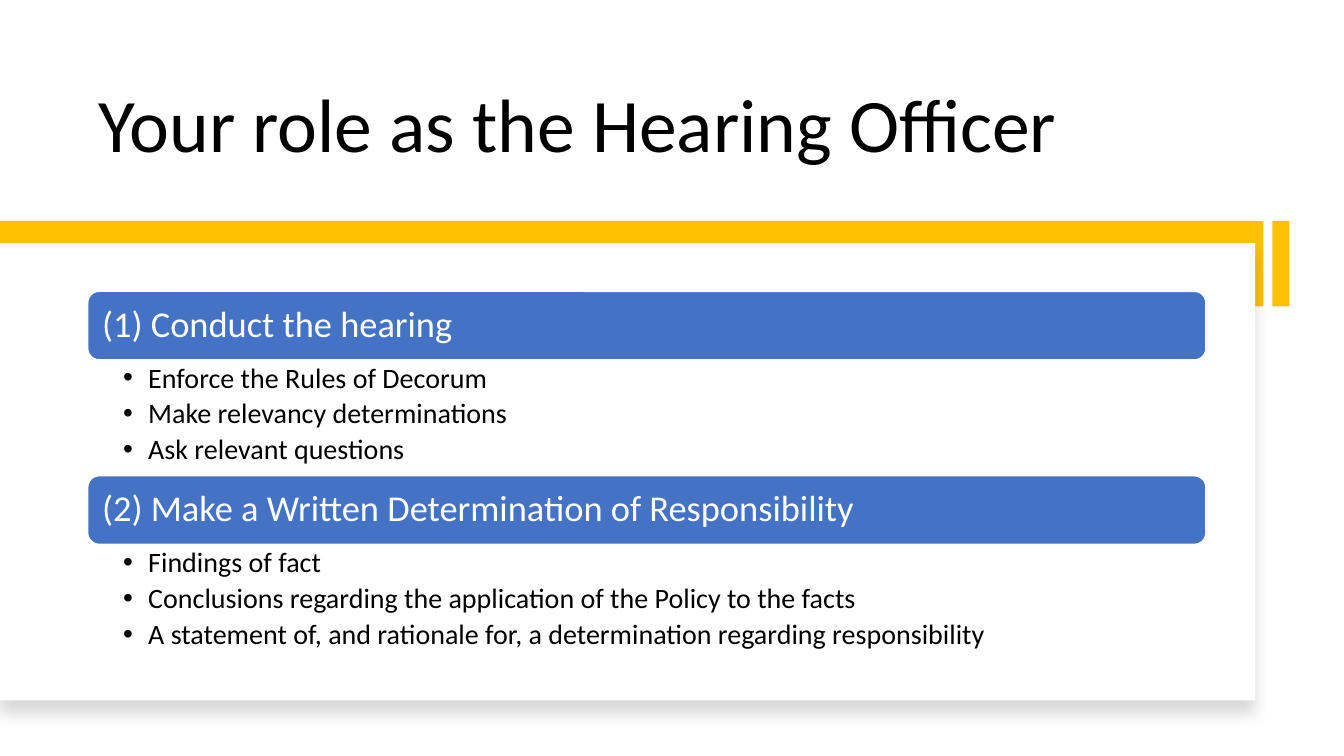
from lxml.etree import SubElement
from pptx import Presentation
from pptx.dml.color import RGBColor
from pptx.enum.shapes import MSO_SHAPE
from pptx.enum.text import MSO_ANCHOR, PP_ALIGN
from pptx.oxml import parse_xml
from pptx.oxml.ns import nsdecls, qn
from pptx.util import Inches, Pt

BLACK = RGBColor(0x00, 0x00, 0x00)
WHITE = RGBColor(0xFF, 0xFF, 0xFF)
GOLD = RGBColor(0xFF, 0xC0, 0x00)
BLUE = RGBColor(0x44, 0x72, 0xC4)
FONT = "Calibri"

DUTIES = [
    ("(1) Conduct the hearing", [
        "Enforce the Rules of Decorum",
        "Make relevancy determinations",
        "Ask relevant questions",
    ]),
    ("(2) Make a Written Determination of Responsibility", [
        "Findings of fact",
        "Conclusions regarding the application of the Policy to the facts",
        "A statement of, and rationale for, a determination regarding responsibility",
    ]),
]
DUTY_LEFT, DUTY_TOP, DUTY_WIDTH = 0.87, 2.89, 11.09
HEADING_HEIGHT, LIST_HEIGHT = 0.68, 1.15


def add_block(slide, box, fill, preset=MSO_SHAPE.RECTANGLE):
    block = slide.shapes.add_shape(preset, *map(Inches, box))
    block.shadow.inherit = False
    block.fill.solid()
    block.fill.fore_color.rgb = fill
    block.line.fill.background()
    return block


def add_drop_shadow(block):
    """Give the block a soft shadow that falls straight down."""
    effects = block._element.spPr.find(qn("a:effectLst"))
    effects.append(parse_xml(
        f'<a:outerShdw {nsdecls("a")} blurRad="{Pt(11)}" dist="{Pt(10)}" dir="5400000"'
        ' algn="t" rotWithShape="0"><a:srgbClr val="000000"><a:alpha val="15000"/>'
        '</a:srgbClr></a:outerShdw>'))


def write_lines(frame, lines, size, color, anchor, insets=(0.1, 0.05, 0.1, 0.05), after=0):
    """Fill a text frame with one paragraph a line; insets run left, top, right, bottom."""
    frame.word_wrap = True
    frame.vertical_anchor = anchor
    for side, inset in zip(("left", "top", "right", "bottom"), insets):
        setattr(frame, f"margin_{side}", Inches(inset))
    for index, line in enumerate(lines):
        paragraph = frame.add_paragraph() if index else frame.paragraphs[0]
        paragraph.alignment = PP_ALIGN.LEFT
        paragraph.line_spacing = 0.9
        paragraph.space_after = Pt(after)
        run = paragraph.add_run()
        run.text = line
        run.font.name = FONT
        run.font.size = Pt(size)
        run.font.color.rgb = color


def add_bullets(frame):
    for paragraph in frame.paragraphs:
        paragraph.level = 1
        properties = paragraph._p.get_or_add_pPr()
        properties.set("marL", str(Inches(0.25)))
        properties.set("indent", str(Inches(-0.25)))
        SubElement(properties, qn("a:buFont"), typeface="Arial")
        SubElement(properties, qn("a:buChar"), char="•")


def add_title(slide, wording):
    title = slide.shapes.add_textbox(*map(Inches, (0.88, 0.42, 10.1, 1.3)))
    write_lines(title.text_frame, [wording], 54, BLACK, MSO_ANCHOR.BOTTOM)


def add_duty(slide, top, heading, tasks):
    bar = add_block(slide, (DUTY_LEFT, top, DUTY_WIDTH, HEADING_HEIGHT), BLUE,
                    MSO_SHAPE.ROUNDED_RECTANGLE)
    bar.line.color.rgb = WHITE
    bar.line.width = Pt(1)
    write_lines(bar.text_frame, [heading], 26, WHITE, MSO_ANCHOR.MIDDLE, (0.11,) * 4)

    task_list = slide.shapes.add_textbox(*map(
        Inches, (DUTY_LEFT, top + HEADING_HEIGHT, DUTY_WIDTH, LIST_HEIGHT)))
    write_lines(task_list.text_frame, tasks, 20, BLACK, MSO_ANCHOR.TOP,
                (0.35, 0.04, 0.2, 0.04), after=4)
    add_bullets(task_list.text_frame)


def main():
    deck = Presentation()
    deck.slide_width, deck.slide_height = Inches(13.33), Inches(7.5)
    slide = deck.slides.add_slide(deck.slide_layouts[6])

    add_title(slide, "Your role as the Hearing Officer")
    add_block(slide, (12.62, 2.19, 0.17, 0.85), GOLD)
    add_block(slide, (0, 2.19, 12.53, 0.85), GOLD)
    panel = add_block(slide, (0, 2.41, 12.45, 4.54), WHITE)
    add_drop_shadow(panel)

    for index, (heading, tasks) in enumerate(DUTIES):
        top = DUTY_TOP + index * (HEADING_HEIGHT + LIST_HEIGHT)
        add_duty(slide, top, heading, tasks)

    deck.save("out.pptx")


if __name__ == "__main__":
    main()
